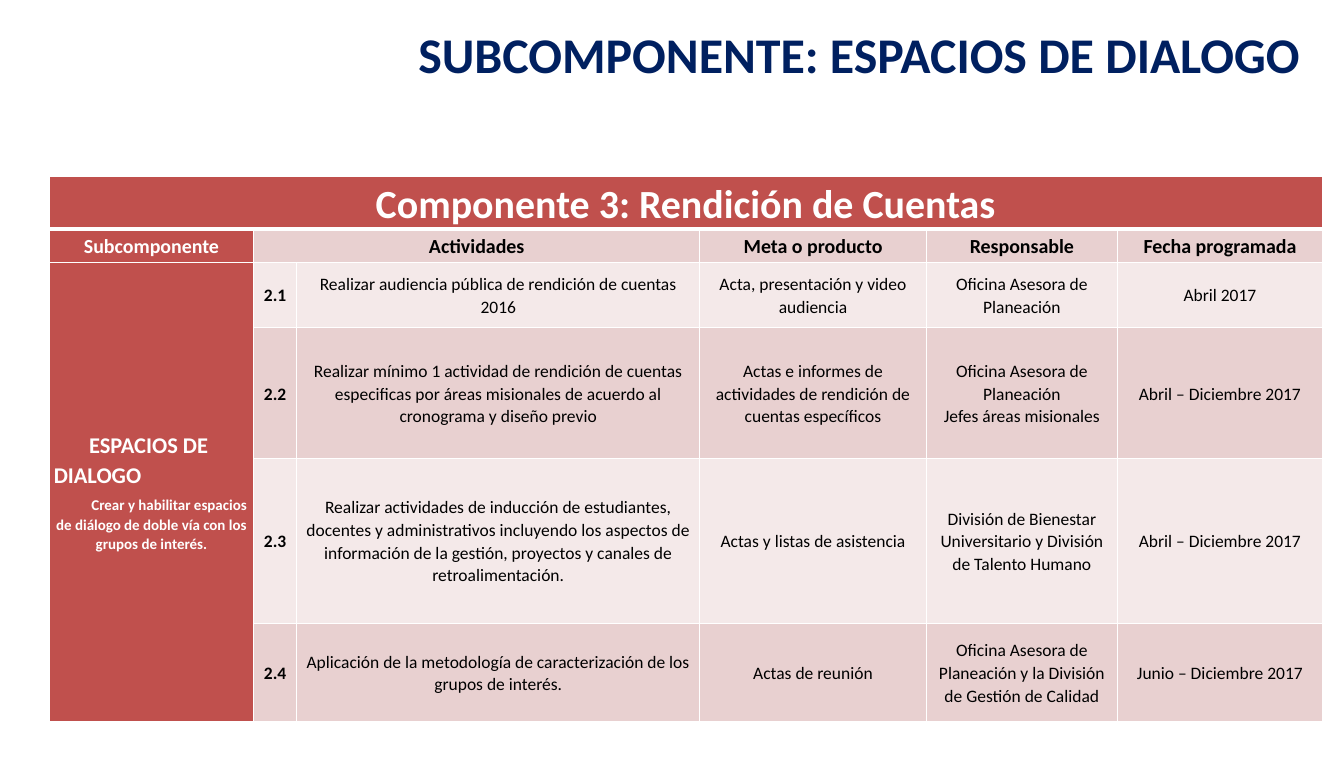
from lxml import etree
from pptx import Presentation
from pptx import util as u
from pptx.dml.color import RGBColor
from pptx.enum import text
from pptx.oxml import ns

NAVY = RGBColor(0x00, 0x20, 0x60)
RED = RGBColor(0xC0, 0x50, 0x4D)
ROSE = RGBColor(0xE8, 0xD0, 0xD0)
PALE = RGBColor(0xF4, 0xE9, 0xE9)
WHITE = RGBColor(0xFF, 0xFF, 0xFF)
BLACK = RGBColor(0x00, 0x00, 0x00)
CENTER = text.PP_ALIGN.CENTER


def add_span(para, words, size, color, bold):
    span = para.add_run()
    span.text = words
    span.font.name = "Calibri"
    span.font.size = u.Pt(size)
    span.font.bold = bold
    span.font.color.rgb = color


def fill_cell(cell, lines, fill, size, color=BLACK, bold=False):
    cell.fill.solid()
    cell.fill.fore_color.rgb = fill
    cell.vertical_anchor = text.MSO_ANCHOR.MIDDLE
    cell.margin_left = cell.margin_right = u.Cm(0.12)
    cell.margin_top = cell.margin_bottom = u.Cm(0)
    for number, words in enumerate(lines.split("\n")):
        para = cell.text_frame.add_paragraph() if number else cell.text_frame.paragraphs[0]
        para.alignment = CENTER
        para.line_spacing = 1.07
        add_span(para, words, size, color, bold)


deck = Presentation()
deck.slide_width = u.Cm(38)
deck.slide_height = u.Cm(22)
page = deck.slides.add_slide(deck.slide_layouts[6])

column_widths = [5.77, 1.22, 11.4, 6.4, 5.41, 5.79]
row_heights = [1.45, 0.94, 1.85, 3.71, 4.65, 2.79]
frame = page.shapes.add_table(
    len(row_heights), len(column_widths), u.Cm(1.4), u.Cm(5),
    u.Cm(sum(column_widths)), u.Cm(sum(row_heights)))
table = frame.table
table.first_row = table.horz_banding = False
for column, width in zip(table.columns, column_widths):
    column.width = u.Cm(width)
for row, height in zip(table.rows, row_heights):
    row.height = u.Cm(height)

for row_number, row in enumerate(table.rows):
    for cell in row.cells:
        properties = cell._tc.get_or_add_tcPr()
        for side in ("lnL", "lnR", "lnT", "lnB"):
            thick = (row_number, side) in ((0, "lnB"), (1, "lnT"))
            border = etree.SubElement(properties, ns.qn("a:" + side), w=str(u.Pt(3 if thick else 1)))
            paint = etree.SubElement(border, ns.qn("a:solidFill"))
            etree.SubElement(paint, ns.qn("a:srgbClr"), val=str(WHITE))

table.cell(0, 0).merge(table.cell(0, 5))
table.cell(1, 1).merge(table.cell(1, 2))
table.cell(2, 0).merge(table.cell(5, 0))

fill_cell(table.cell(0, 0), "Componente 3: Rendición de Cuentas", RED, 32, WHITE, True)
fill_cell(table.cell(1, 0), "Subcomponente", RED, 16, WHITE, True)
headings = {1: "Actividades", 3: "Meta o producto", 4: "Responsable", 5: "Fecha programada"}
for column_number, heading in headings.items():
    fill_cell(table.cell(1, column_number), heading, ROSE, 16, bold=True)

activities = [
    ("2.1", "Realizar audiencia pública de rendición de cuentas 2016",
     "Acta, presentación y video audiencia",
     "Oficina Asesora de Planeación", "Abril 2017"),
    ("2.2", "Realizar mínimo 1 actividad de rendición de cuentas especificas por áreas "
     "misionales de acuerdo al cronograma y diseño previo",
     "Actas e informes de actividades de rendición de cuentas específicos",
     "Oficina Asesora de Planeación\nJefes áreas misionales", "Abril – Diciembre 2017"),
    ("2.3", "Realizar actividades de inducción de estudiantes, docentes y administrativos "
     "incluyendo los aspectos de información de la gestión, proyectos y canales de "
     "retroalimentación.",
     "Actas y listas de asistencia",
     "División de Bienestar Universitario y División de Talento Humano",
     "Abril – Diciembre 2017"),
    ("2.4", "Aplicación de la metodología de caracterización de los grupos de interés.",
     "Actas de reunión",
     "Oficina Asesora de Planeación y la División de Gestión de Calidad",
     "Junio – Diciembre 2017"),
]
for row_number, activity in enumerate(activities, start=2):
    fill = ROSE if row_number % 2 else PALE
    for column_number, words in enumerate(activity, start=1):
        fill_cell(table.cell(row_number, column_number), words, fill, 14, bold=column_number == 1)

dialogue = table.cell(2, 0)
fill_cell(dialogue, "ESPACIOS DE DIALOGO", RED, 18, WHITE, True)
name = dialogue.text_frame.paragraphs[0]
name.alignment = text.PP_ALIGN.LEFT
purpose = dialogue.text_frame.add_paragraph()
purpose.alignment = CENTER
purpose.line_spacing = 1.07
purpose.space_before = u.Pt(5)
add_span(purpose, "Crear y habilitar espacios de diálogo de doble vía con los grupos de interés.",
         12, WHITE, True)
for para in (name, purpose):
    para._p.get_or_add_pPr().set("indent", str(u.Cm(1)))

box = page.shapes.add_textbox(u.Cm(10.39), u.Cm(0.66), u.Cm(27.61), u.Cm(3.43))
title = box.text_frame
title.word_wrap = True
title.margin_left, title.margin_right = u.Cm(0.5), u.Cm(1.25)
title.margin_top = title.margin_bottom = u.Cm(0)
title.paragraphs[0].alignment = text.PP_ALIGN.RIGHT
add_span(title.paragraphs[0], "SUBCOMPONENTE: ESPACIOS DE DIALOGO", 40, NAVY, True)

deck.save("out.pptx")
